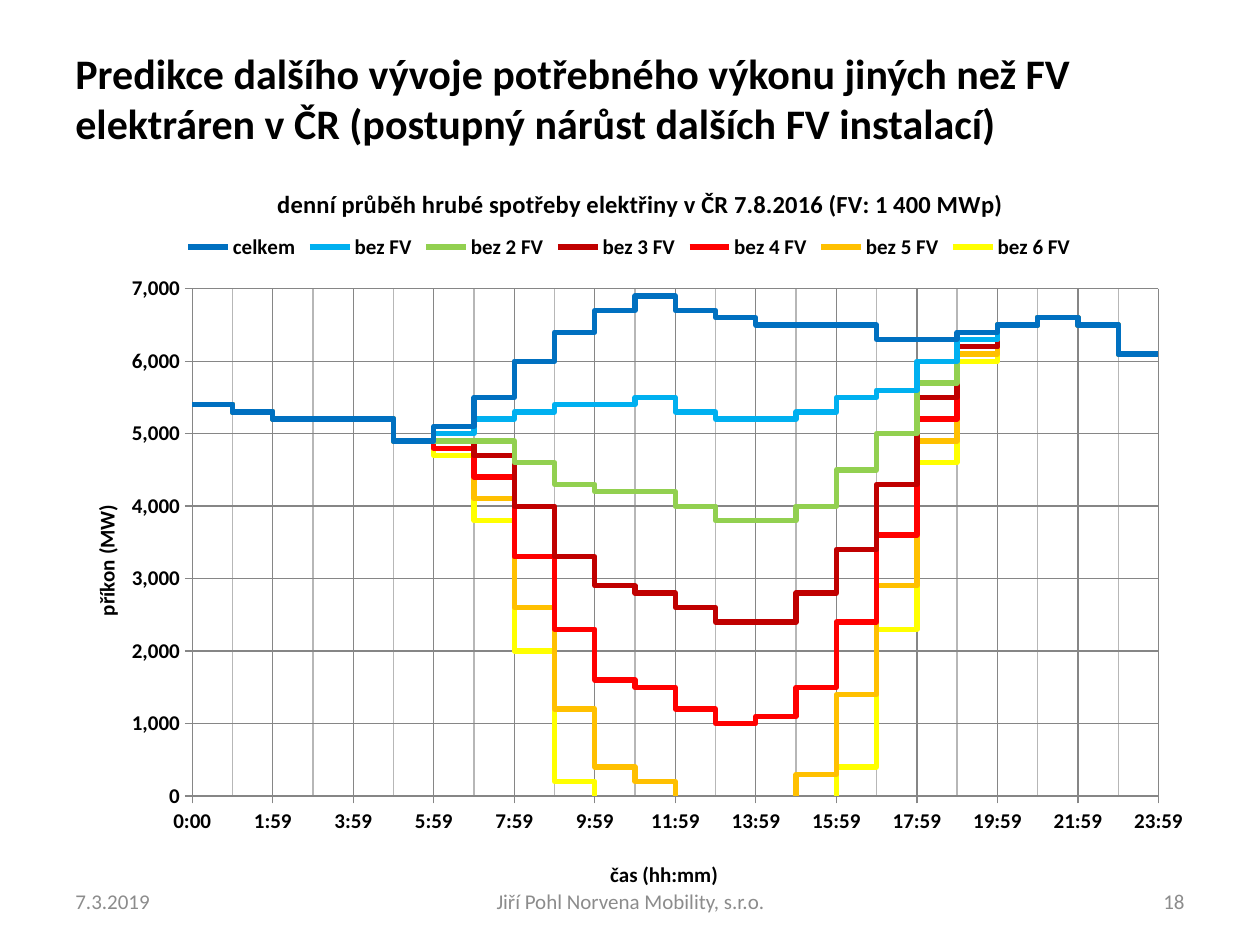
from lxml import etree
from pptx import Presentation
from pptx.chart.data import XyChartData
from pptx.dml.color import RGBColor
from pptx.enum.chart import XL_CHART_TYPE, XL_LEGEND_POSITION, XL_TICK_MARK
from pptx.enum.text import MSO_ANCHOR, PP_ALIGN
from pptx.oxml.ns import qn
from pptx.util import Inches, Pt

KIND = XL_CHART_TYPE.XY_SCATTER_LINES_NO_MARKERS
TOP = XL_LEGEND_POSITION.TOP
OUT, NONE = XL_TICK_MARK.OUTSIDE, XL_TICK_MARK.NONE
MID = MSO_ANCHOR.MIDDLE
LEFT, CENTER, RIGHT = PP_ALIGN.LEFT, PP_ALIGN.CENTER, PP_ALIGN.RIGHT
FONT = "Calibri"
COLORS = {
    "text": "000000", "foot": "8C8C8C", "grid": "868686",
    "celkem": "0070C0", "bez FV": "00B0F0", "bez 2 FV": "92D050",
    "bez 3 FV": "C00000", "bez 4 FV": "FF0000", "bez 5 FV": "FFC000",
    "bez 6 FV": "FFFF00",
}
NIGHT = [5400, 5300, 5200, 5200, 5200, 4900]
LATE = [6500, 6600, 6500, 6100]
DAY = {
    "celkem": [5100, 5500, 6000, 6400, 6700, 6900, 6700, 6600, 6500, 6500, 6500, 6300, 6300, 6400],
    "bez FV": [5000, 5200, 5300, 5400, 5400, 5500, 5300, 5200, 5200, 5300, 5500, 5600, 6000, 6300],
    "bez 2 FV": [4900, 4900, 4600, 4300, 4200, 4200, 4000, 3800, 3800, 4000, 4500, 5000, 5700, 6300],
    "bez 3 FV": [4900, 4700, 4000, 3300, 2900, 2800, 2600, 2400, 2400, 2800, 3400, 4300, 5500, 6200],
    "bez 4 FV": [4800, 4400, 3300, 2300, 1600, 1500, 1200, 1000, 1100, 1500, 2400, 3600, 5200, 6200],
    "bez 5 FV": [4800, 4100, 2600, 1200, 400, 200, -200, -400, -300, 300, 1400, 2900, 4900, 6100],
    "bez 6 FV": [4700, 3800, 2000, 200, -900, -1200, -1500, -1800, -1700, -1000, 400, 2300, 4600, 6000],
}


def style(font, size, bold, color):
    look = {"name": FONT, "size": Pt(size), "bold": bold}
    for key, value in look.items():
        setattr(font, key, value)
    font.color.rgb = RGBColor.from_string(COLORS[color])


def place(node, index, box, inner=False):
    for old in node.findall(qn("c:layout")):
        node.remove(old)
    layout = etree.Element(qn("c:layout"))
    node.insert(index, layout)
    manual = etree.SubElement(layout, qn("c:manualLayout"))
    rows = [("layoutTarget", "inner")] if inner else []
    rows += [("xMode", "edge"), ("yMode", "edge")] + list(zip("xywh", box))
    for tag, value in rows:
        etree.SubElement(manual, qn("c:" + tag)).set("val", str(value))


deck = Presentation()
deck.slide_width, deck.slide_height = Inches(10), Inches(7.5)
slide = deck.slides.add_slide(deck.slide_layouts[6])

data = XyChartData()
for name, day in DAY.items():
    series = data.add_series(name)
    for hour, load in enumerate(NIGHT + day + LATE):
        series.add_data_point(hour / 24, load)
        series.add_data_point((hour + 1) / 24, load)

frame = slide.shapes.add_chart(
    KIND, Inches(0.43), Inches(1.21), Inches(9.13), Inches(6.01), data)
chart = frame.chart
style(chart.font, 10, False, "text")
for series in chart.plots[0].series:
    series.smooth = False
    series.format.line.width = Pt(3)
    series.format.line.color.rgb = RGBColor.from_string(COLORS[series.name])

chart.has_legend = True
legend = chart.legend
legend.position = TOP
legend.include_in_layout = False
style(legend.font, 12, True, "text")

hours, power = chart.category_axis, chart.value_axis
AXES = [
    (hours, {"minimum_scale": 0, "maximum_scale": 1, "major_unit": 0.083333,
             "minor_unit": 0.041667, "has_minor_gridlines": True}, "h:mm"),
    (power, {"minimum_scale": 0, "maximum_scale": 7000, "major_unit": 1000,
             "has_minor_gridlines": False}, "#,##0"),
]
for axis, scale, code in AXES:
    scale.update(has_major_gridlines=True, major_tick_mark=OUT, minor_tick_mark=NONE)
    for key, value in scale.items():
        setattr(axis, key, value)
    labels = axis.tick_labels
    labels.number_format, labels.number_format_is_linked = code, False
    style(labels.font, 12, True, "text")
    for line in (axis.format.line, axis.major_gridlines.format.line):
        line.width = Pt(0.75)
        line.color.rgb = RGBColor.from_string(COLORS["grid"])

chart.has_title = True
TITLES = [
    (chart.chart_title, "denní průběh hrubé spotřeby elektřiny v ČR 7.8.2016 (FV: 1 400 MWp)",
     14, (0.19, 0.04)),
    (hours.axis_title, "čas (hh:mm)", 12, (0.48, 0.93)),
    (power.axis_title, "příkon (MW)", 12, (0.03, 0.46)),
]
for title, text, size, spot in TITLES:
    title.text_frame.text = text
    style(title.text_frame.paragraphs[0].runs[0].font, size, True, "text")
    place(title._element, 1, spot)
place(legend._element, 1, (0.11, 0.1, 0.78, 0.05))
place(chart._chartSpace.chart.plotArea, 0, (0.12, 0.18, 0.84, 0.67), True)

TEXTS = [
    ("Predikce dalšího vývoje potřebného výkonu jiných než FV elektráren v ČR "
     "(postupný nárůst dalších FV instalací)", 0.5, 0, 9, 1.55, LEFT, 24, True, "text"),
    ("7.3.2019", 0.5, 6.95, 2.33, 0.4, LEFT, 12, False, "foot"),
    ("Jiří Pohl Norvena Mobility, s.r.o.", 3.42, 6.95, 3.17, 0.4, CENTER, 12, False, "foot"),
    ("18", 7.17, 6.95, 2.33, 0.4, RIGHT, 12, False, "foot"),
]
for text, x, y, w, h, align, size, bold, color in TEXTS:
    box = slide.shapes.add_textbox(Inches(x), Inches(y), Inches(w), Inches(h)).text_frame
    box.word_wrap, box.vertical_anchor = True, MID
    par = box.paragraphs[0]
    par.alignment = align
    run = par.add_run()
    run.text = text
    style(run.font, size, bold, color)

deck.save("out.pptx")
